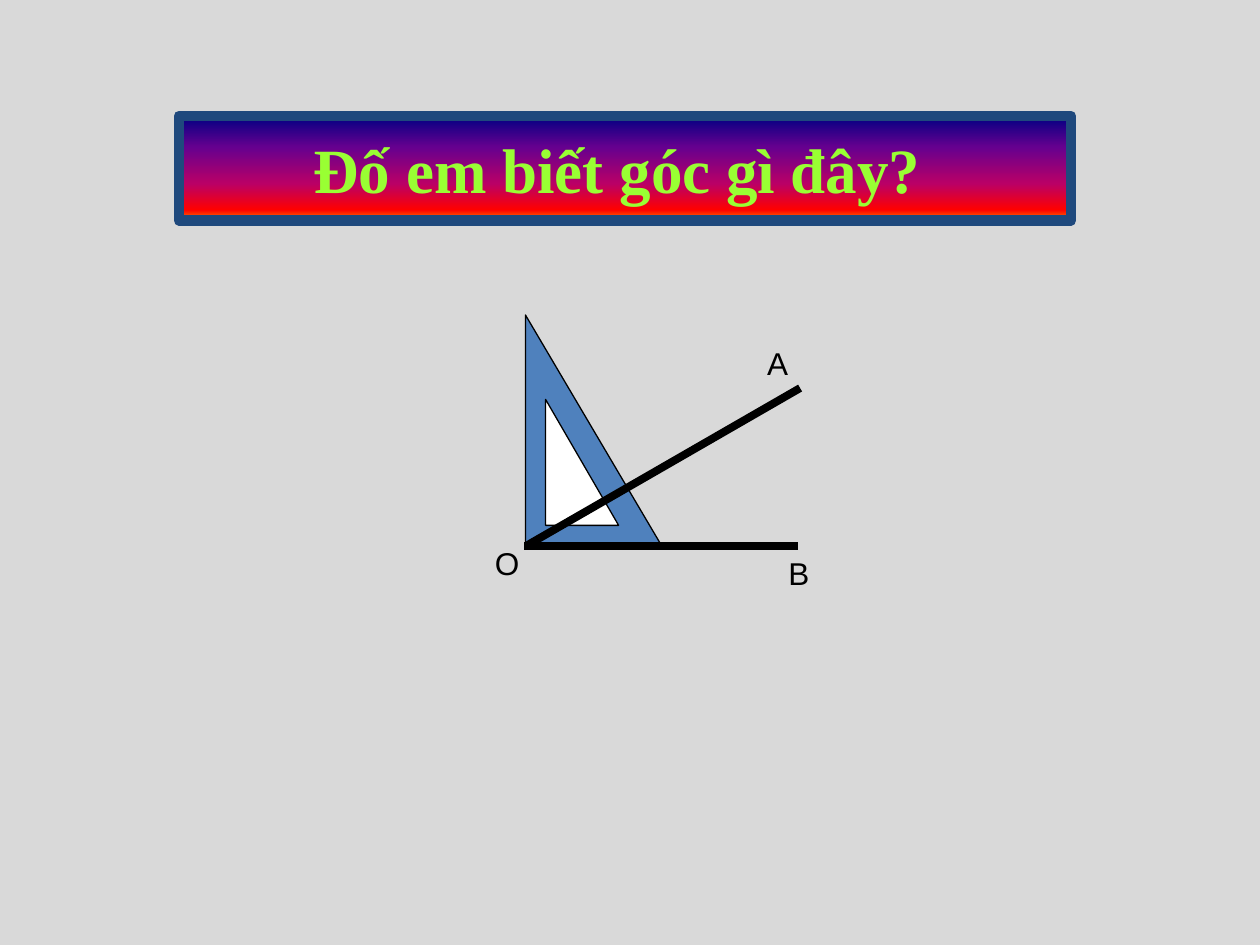
from typing import NamedTuple

from lxml.etree import SubElement
from pptx import Presentation
from pptx.dml.color import RGBColor
from pptx.enum.shapes import MSO_CONNECTOR, MSO_SHAPE
from pptx.enum.text import MSO_ANCHOR, MSO_AUTO_SIZE, PP_ALIGN
from pptx.oxml.ns import qn
from pptx.util import Inches, Pt

BLACK = "000000"
BANNER_STOPS = [(0, "000082"), (30, "66008F"), (65, "BA0066"), (90, "FF0000"), (100, "FF8200")]


class Triangle(NamedTuple):
    left: float
    top: float
    width: float
    height: float
    fill: str


class Ray(NamedTuple):
    start: tuple[float, float]
    end: tuple[float, float]


class PointLabel(NamedTuple):
    text: str
    left: float
    top: float


SET_SQUARE = [
    Triangle(4.17, 2.5, 1.08, 1.83, "4F81BD"),
    Triangle(4.33, 3.17, 0.58, 1, "FFFFFF"),
]
RAYS = [Ray((4.18, 4.33), (6.35, 3.08)), Ray((4.16, 4.33), (6.33, 4.33))]
POINT_LABELS = [
    PointLabel("B", 6.16, 4.35),
    PointLabel("A", 5.99, 2.68),
    PointLabel("O", 3.83, 4.27),
]


def color(value: str) -> RGBColor:
    return RGBColor.from_string(value)


def set_line(shape, value: str, points: float) -> None:
    shape.line.color.rgb = color(value)
    shape.line.width = Pt(points)


def add_run(paragraph, text: str, font: str, size: float, value: str, bold: bool = False) -> None:
    run = paragraph.add_run()
    run.text = text
    run.font.name = font
    run.font.size = Pt(size)
    run.font.bold = bold
    run.font.color.rgb = color(value)


def add_triangle(group, triangle: Triangle) -> None:
    shape = group.shapes.add_shape(
        MSO_SHAPE.RIGHT_TRIANGLE, Inches(triangle.left), Inches(triangle.top),
        Inches(triangle.width), Inches(triangle.height))
    shape.shadow.inherit = False
    shape.fill.solid()
    shape.fill.fore_color.rgb = color(triangle.fill)
    set_line(shape, BLACK, 0.75)


def add_ray(group, ray: Ray) -> None:
    connector = group.shapes.add_connector(
        MSO_CONNECTOR.STRAIGHT, *(Inches(value) for value in ray.start + ray.end))
    set_line(connector, BLACK, 4.5)
    SubElement(connector._element.spPr, qn("a:effectLst"))


def add_point_label(group, label: PointLabel) -> None:
    box = group.shapes.add_textbox(
        Inches(label.left), Inches(label.top), Inches(0.5), Inches(0.57))
    box.text_frame.word_wrap = True
    add_run(box.text_frame.paragraphs[0], label.text, "Arial", 18, BLACK)


def shape_as_banner(title) -> None:
    """Give the title placeholder a pill outline and a vertical gradient."""
    title.left, title.top = Inches(1.42), Inches(0.92)
    title.width, title.height = Inches(7.08), Inches(0.83)
    properties = title._element.spPr
    geometry = SubElement(properties, qn("a:prstGeom"), prst="roundRect")
    adjustments = SubElement(geometry, qn("a:avLst"))
    SubElement(adjustments, qn("a:gd"), name="adj", fmla="val 50000")
    gradient = SubElement(properties, qn("a:gradFill"), rotWithShape="1")
    stops = SubElement(gradient, qn("a:gsLst"))
    for percent, value in BANNER_STOPS:
        stop = SubElement(stops, qn("a:gs"), pos=str(percent * 1000))
        SubElement(stop, qn("a:srgbClr"), val=value)
    SubElement(gradient, qn("a:lin"), ang=str(90 * 60000), scaled="1")
    set_line(title, "1F497D", 6)


def write_title(title, text: str) -> None:
    frame = title.text_frame
    frame.auto_size = MSO_AUTO_SIZE.NONE
    frame.word_wrap = False
    frame.vertical_anchor = MSO_ANCHOR.MIDDLE
    paragraph = frame.paragraphs[0]
    paragraph.alignment = PP_ALIGN.CENTER
    indent = Inches(0.38)
    paragraph_properties = paragraph._p.get_or_add_pPr()
    paragraph_properties.set("marL", str(indent))
    paragraph_properties.set("indent", str(-indent))
    add_run(paragraph, text, "Times New Roman", 36, "99FF33", bold=True)


def main() -> None:
    presentation = Presentation()
    presentation.slide_width, presentation.slide_height = Inches(10), Inches(7.5)
    slide = presentation.slides.add_slide(presentation.slide_layouts[5])
    slide.background.fill.solid()
    slide.background.fill.fore_color.rgb = color("D9D9D9")

    shape_as_banner(slide.shapes.title)
    write_title(slide.shapes.title, "Đố em biết góc gì đây? ")

    set_square = slide.shapes.add_group_shape()
    for triangle in SET_SQUARE:
        add_triangle(set_square, triangle)

    angle = slide.shapes.add_group_shape()
    for ray in RAYS:
        add_ray(angle, ray)
    for label in POINT_LABELS:
        add_point_label(angle, label)

    presentation.save("out.pptx")


if __name__ == "__main__":
    main()
